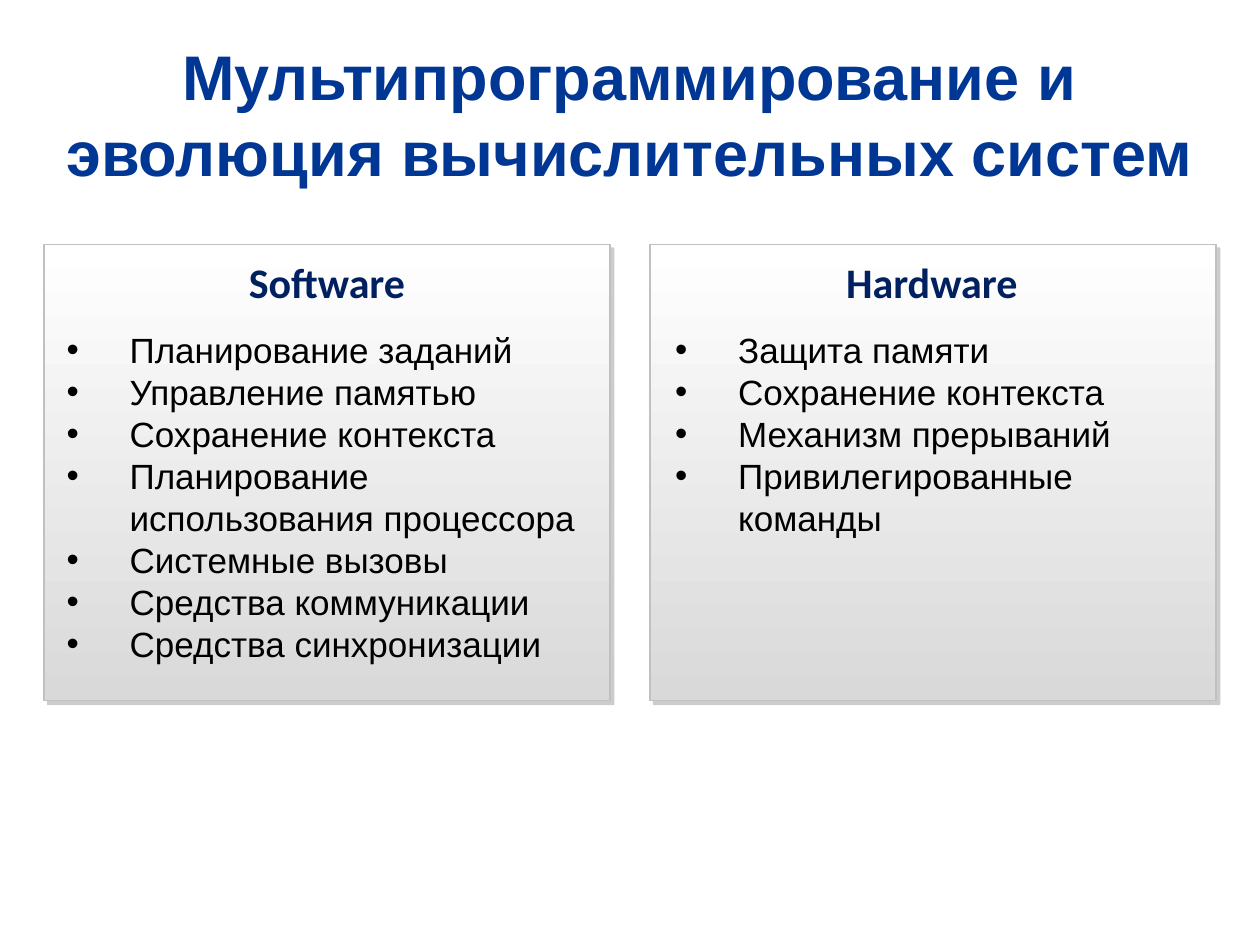
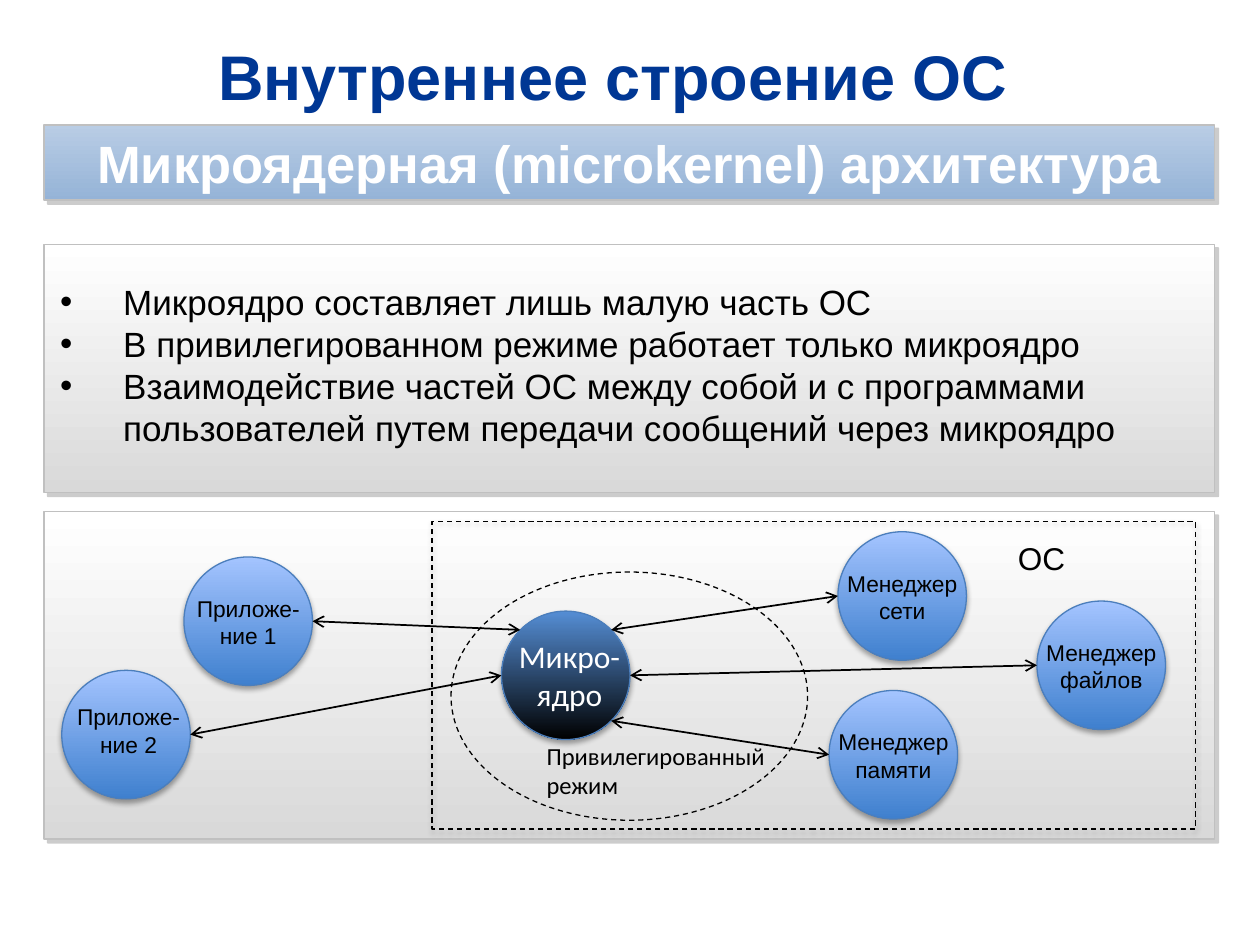
import math

import pptx
import pptx.dml.color
import pptx.enum.dml
import pptx.enum.shapes
import pptx.enum.text
import pptx.oxml
import pptx.oxml.ns
import pptx.util
from pptx.util import Inches

COLORS = {
    "title": "003794", "heading": "002060", "black": "000000", "white": "FFFFFF",
    "panel_end": "D9D9D9", "panel_line": "C0C0C0", "panel_shadow": "808080",
    "band_start": "B9CDE5", "band_end": "95B3D7",
    "circle_start": "A4C4FF", "circle_end": "3F80CE", "circle_line": "4B7EBC",
    "kernel": "558ED5",
}
TEXT_STYLES = {
    "title": {"name": "Arial", "size": 36, "color": "title", "bold": True},
    "band": {"name": "Arial", "size": 30, "color": "white", "bold": True},
    "heading": {"name": "Calibri", "size": 24, "color": "heading", "bold": True},
    "body": {"name": "Arial", "size": 20, "color": "black"},
    "zone": {"name": "Arial", "size": 18, "color": "black"},
    "kernel": {"name": "Calibri", "size": 18, "color": "white"},
    "mode": {"name": "Calibri", "size": 14, "color": "black"},
    "label": {"name": "Arial", "size": 13, "color": "black"},
}
SHADOWS = {
    "hard": ("panel_shadow", 40, 0, 3, 45),
    "soft": ("black", 35, 3.1, 1.8, 90),
}
SHAPE = pptx.enum.shapes.MSO_SHAPE
ALIGN = pptx.enum.text.PP_ALIGN
ANCHOR = pptx.enum.text.MSO_ANCHOR
LEFT, WIDTH = 0.35, 9.29
PANEL_TOP = 1.94
RADIUS = 0.51


def color(name):
    return pptx.dml.color.RGBColor.from_string(COLORS[name])


def element(markup):
    namespace = pptx.oxml.ns.nsdecls("a")
    tag, rest = markup.split(" ", 1)
    return pptx.oxml.parse_xml(f"{tag} {namespace} {rest}")


def rim_point(center, degrees):
    angle = math.radians(degrees)
    return center[0] + RADIUS * math.cos(angle), center[1] + RADIUS * math.sin(angle)


class Deck:
    def __init__(self):
        self.presentation = pptx.Presentation()
        self.presentation.slide_width = Inches(10)
        self.presentation.slide_height = Inches(7.5)
        self.slide = None

    def new_slide(self, title, height, right=0.1):
        self.slide = self.presentation.slides.add_slide(self.presentation.slide_layouts[6])
        self.text([title], "title", LEFT, 0.26, WIDTH, height, align=ALIGN.CENTER,
                  vertical_anchor=ANCHOR.MIDDLE, margin_right=Inches(right))

    def set_text(self, frame, lines, style, align, bulleted=False, **frame_format):
        frame_format = {"word_wrap": True, "vertical_anchor": ANCHOR.TOP, **frame_format}
        for name, value in frame_format.items():
            setattr(frame, name, value)
        frame.text = "\n".join(lines)
        for paragraph in frame.paragraphs:
            paragraph.alignment = align
            for name, value in TEXT_STYLES[style].items():
                if name == "color":
                    paragraph.runs[0].font.color.rgb = color(value)
                else:
                    value = pptx.util.Pt(value) if name == "size" else value
                    setattr(paragraph.runs[0].font, name, value)
            if bulleted:
                properties = paragraph._p.get_or_add_pPr()
                properties.set("marL", str(Inches(0.5)))
                properties.set("indent", str(Inches(-0.5)))
                properties.append(element('<a:buFont typeface="Arial"/>'))
                properties.append(element('<a:buChar char="•"/>'))

    def text(self, lines, style, left, top, width, height, align=ALIGN.LEFT,
             bulleted=False, **frame_format):
        box = self.slide.shapes.add_textbox(
            Inches(left), Inches(top), Inches(width), Inches(height))
        self.set_text(box.text_frame, lines, style, align, bulleted, **frame_format)

    def figure(self, kind, left, top, width, height, line, weight,
               gradient=None, shadow=None, dashed=False):
        shape = self.slide.shapes.add_shape(
            kind, Inches(left), Inches(top), Inches(width), Inches(height))
        if gradient:
            shape.fill.gradient()
            shape.fill.gradient_angle = 270
            for stop, position, name in zip(shape.fill.gradient_stops, (0, 1), gradient):
                stop.position = position
                stop.color.rgb = color(name)
        else:
            shape.fill.background()
        shape.line.color.rgb = color(line)
        shape.line.width = pptx.util.Pt(weight)
        if dashed:
            shape.line.dash_style = pptx.enum.dml.MSO_LINE.DASH
        shape.shadow.inherit = False
        if shadow:
            name, opacity, blur, distance, angle = SHADOWS[shadow]
            effects = shape._element.spPr.find(pptx.oxml.ns.qn("a:effectLst"))
            effects.append(element(
                f'<a:outerShdw blurRad="{pptx.util.Pt(blur)}" dist="{pptx.util.Pt(distance)}" '
                f'dir="{angle * 60000}" algn="tl" rotWithShape="0">'
                f'<a:srgbClr val="{COLORS[name]}"><a:alpha val="{opacity * 1000}"/>'
                '</a:srgbClr></a:outerShdw>'))
        return shape

    def panel(self, left, top, width, height, gradient=("white", "panel_end")):
        return self.figure(SHAPE.RECTANGLE, left, top, width, height, "panel_line", 1,
                           gradient, "hard")

    def band(self, caption):
        band = self.panel(LEFT, 0.99, WIDTH, 0.6, ("band_start", "band_end"))
        self.set_text(band.text_frame, [caption], "band", ALIGN.CENTER,
                      vertical_anchor=ANCHOR.MIDDLE,
                      margin_left=Inches(0.24), margin_right=Inches(0.24),
                      margin_top=Inches(0.04), margin_bottom=Inches(0.04))

    def circle(self, center, gradient=("circle_start", "circle_end")):
        self.figure(SHAPE.OVAL, center[0] - RADIUS, center[1] - RADIUS,
                    2 * RADIUS, 2 * RADIUS, "circle_line", 0.75, gradient, "soft")

    def arrow(self, start, end):
        connector = self.slide.shapes.add_connector(
            pptx.enum.shapes.MSO_CONNECTOR.STRAIGHT,
            *(Inches(value) for value in (*start, *end)))
        connector.line.color.rgb = color("black")
        connector.line.width = pptx.util.Pt(1)
        line = connector.line._get_or_add_ln()
        for tag in ("headEnd", "tailEnd"):
            line.append(element(f'<a:{tag} type="arrow"/>'))
        connector._element.spPr.append(element("<a:effectLst />"))


def build_evolution(deck):
    deck.new_slide("Мультипрограммирование и эволюция вычислительных систем", 1.28)
    columns = [
        ("Software", 0.35, 0.5, 0.43, 3.1, [
            "Планирование заданий", "Управление памятью", "Сохранение контекста",
            "Планирование использования процессора", "Системные вызовы",
            "Средства коммуникации", "Средства синхронизации"]),
        ("Hardware", 5.16, 5.3, 5.26, 1.78, [
            "Защита памяти", "Сохранение контекста", "Механизм прерываний",
            "Привилегированные команды"]),
    ]
    for heading, panel_left, heading_left, list_left, list_height, items in columns:
        deck.panel(panel_left, PANEL_TOP, 4.49, 3.62)
        deck.text([heading], "heading", heading_left, 1.99, 4.19, 0.5, ALIGN.CENTER)
        deck.text(items, "body", list_left, 2.56, 4.38, list_height, bulleted=True)


def build_microkernel(deck):
    deck.new_slide("Внутреннее строение ОС", 0.68, right=0.36)
    deck.panel(LEFT, PANEL_TOP, WIDTH, 1.97)
    deck.text([
        "Микроядро составляет лишь малую часть ОС",
        "В привилегированном режиме работает только микроядро",
        "Взаимодействие частей ОС между собой и с программами пользователей "
        "путем передачи сообщений через микроядро",
    ], "body", 0.38, 2.18, 9.27, 1.45, bulleted=True)
    deck.panel(LEFT, 4.06, WIDTH, 2.6)
    deck.band("Микроядерная (microkernel) архитектура")

    kernel = (4.49, 5.36)
    clients = [
        ("Менеджер сети", (7.16, 4.73), -45, 180, (0, 0)),
        ("Менеджер файлов", (8.74, 5.28), 0, 180, (0, 0)),
        ("Менеджер памяти", (7.09, 5.99), 45, 180, (0, 0)),
        ("Приложе-ние 1", (1.97, 4.93), -135, 0, (0, 0)),
        ("Приложе-ние 2", (1.0, 5.83), 180, 0, (0.02, -0.04)),
    ]
    deck.circle(kernel, ("kernel", "black"))
    for _, center, *_ in clients:
        deck.circle(center)
    deck.text(["Микро-", "ядро"], "kernel", 3.98, 5.01, 1.08, 0.71, ALIGN.CENTER)
    deck.figure(SHAPE.OVAL, 3.58, 4.54, 2.83, 1.97, "black", 0.75, dashed=True)
    deck.text(["Привилегированный режим"], "mode", 4.24, 5.83, 2.2, 0.57)
    for label, (x, y), _, _, (shift_x, shift_y) in clients:
        deck.text([label], "label", x - 0.59 + shift_x, y - 0.26 + shift_y,
                  1.18, 0.54, ALIGN.CENTER)
    deck.figure(SHAPE.RECTANGLE, 3.43, 4.14, 6.06, 2.44, "black", 0.75,
                shadow="soft", dashed=True)
    deck.text(["ОС"], "zone", 7.98, 4.23, 0.79, 0.4)
    for _, center, kernel_angle, client_angle, _ in clients:
        deck.arrow(rim_point(kernel, kernel_angle), rim_point(center, client_angle))


def main():
    deck = Deck()
    build_evolution(deck)
    build_microkernel(deck)
    deck.presentation.save("out.pptx")


if __name__ == "__main__":
    main()
